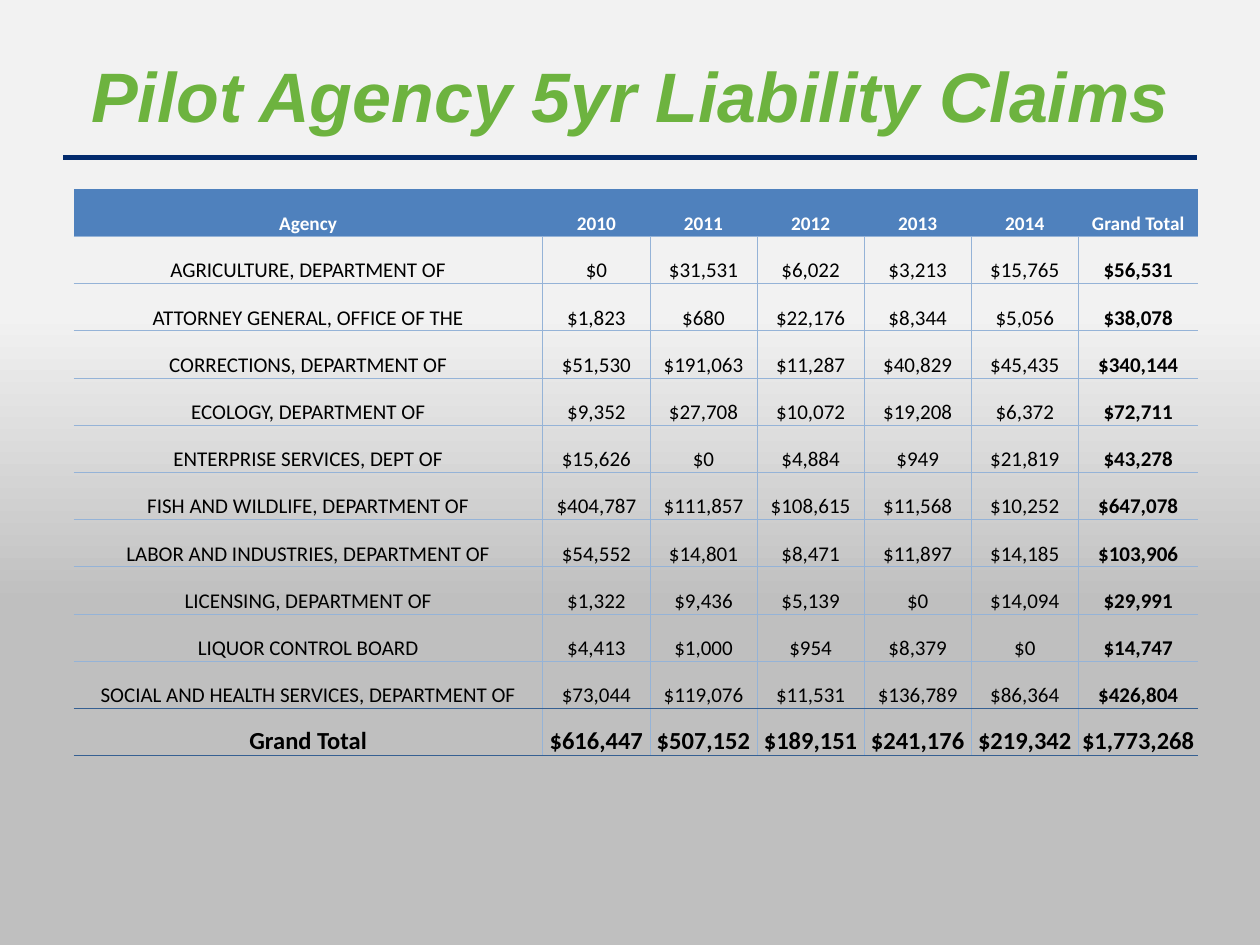
from dataclasses import dataclass

from lxml.etree import SubElement
from pptx import Presentation
from pptx.dml.color import RGBColor
from pptx.enum.shapes import MSO_CONNECTOR
from pptx.enum.text import MSO_ANCHOR, MSO_AUTO_SIZE, PP_ALIGN
from pptx.oxml.ns import qn
from pptx.util import Pt

NAVY, GREEN, BLUE = "032B6D", "6DB33F", "4F81BD"
PALE_BLUE, DARK_BLUE = "95B3D7", "366092"
WHITE, BLACK = "FFFFFF", "000000"
NO_STYLE = "{2D5ABB26-0587-4C30-8999-92F81FD0307C}"

COLUMN_WIDTHS = [268.2, *[61.2] * 5, 68.4]
ROW_HEIGHT = 27
HEADER = ["Agency", "2010", "2011", "2012", "2013", "2014", "Grand Total"]
CLAIMS = [
    ["AGRICULTURE, DEPARTMENT OF", 0, 31531, 6022, 3213, 15765, 56531],
    ["ATTORNEY GENERAL, OFFICE OF THE", 1823, 680, 22176, 8344, 5056, 38078],
    ["CORRECTIONS, DEPARTMENT OF", 51530, 191063, 11287, 40829, 45435, 340144],
    ["ECOLOGY, DEPARTMENT OF", 9352, 27708, 10072, 19208, 6372, 72711],
    ["ENTERPRISE SERVICES, DEPT OF", 15626, 0, 4884, 949, 21819, 43278],
    ["FISH AND WILDLIFE, DEPARTMENT OF", 404787, 111857, 108615, 11568, 10252, 647078],
    ["LABOR AND INDUSTRIES, DEPARTMENT OF", 54552, 14801, 8471, 11897, 14185, 103906],
    ["LICENSING, DEPARTMENT OF", 1322, 9436, 5139, 0, 14094, 29991],
    ["LIQUOR CONTROL BOARD", 4413, 1000, 954, 8379, 0, 14747],
    ["SOCIAL AND HEALTH SERVICES, DEPARTMENT OF", 73044, 119076, 11531, 136789, 86364, 426804],
]
TOTALS = ["Grand Total", 616447, 507152, 189151, 241176, 219342, 1773268]


@dataclass
class Border:
    color: str = PALE_BLUE
    width: float = 0.5


@dataclass
class RowStyle:
    size: float
    color: str = BLACK
    bold: bool = False
    fill: str | None = None
    top: Border | None = None
    bottom: Border | None = None
    inner: Border | None = None


THIN, DARK, HEAVY = Border(), Border(DARK_BLUE), Border(DARK_BLUE, 1)
HEADER_STYLE = RowStyle(11, WHITE, bold=True, fill=BLUE, bottom=THIN)
AGENCY_STYLE = RowStyle(12, top=THIN, bottom=THIN, inner=THIN)
LAST_AGENCY_STYLE = RowStyle(12, top=THIN, bottom=DARK, inner=THIN)
TOTAL_STYLE = RowStyle(14, bold=True, top=DARK, bottom=HEAVY, inner=THIN)


def rgb(color: str) -> RGBColor:
    return RGBColor.from_string(color)


def set_border(cell, side: str, border: Border | None) -> None:
    """Add one edge; edges must be added before the cell's fill."""
    line = SubElement(cell._tc.get_or_add_tcPr(), qn(f"a:ln{side}"))
    if border is None:
        SubElement(line, qn("a:noFill"))
        return
    line.set("w", str(Pt(border.width)))
    fill = SubElement(line, qn("a:solidFill"))
    SubElement(fill, qn("a:srgbClr"), val=border.color)


def format_font(font, name: str, size: float, color: str, bold: bool) -> None:
    font.name, font.size, font.bold = name, Pt(size), bold
    font.color.rgb = rgb(color)


def fill_cell(cell, value: str | int, style: RowStyle, column: int) -> None:
    last = len(HEADER) - 1
    cell.margin_left = cell.margin_right = cell.margin_top = Pt(0.72)
    cell.margin_bottom = 0
    cell.vertical_anchor = MSO_ANCHOR.BOTTOM
    set_border(cell, "L", style.inner if column > 0 else None)
    set_border(cell, "R", style.inner if column < last else None)
    set_border(cell, "T", style.top)
    set_border(cell, "B", style.bottom)
    if style.fill:
        cell.fill.solid()
        cell.fill.fore_color.rgb = rgb(style.fill)
    else:
        cell.fill.background()
    cell.text_frame.text = value if isinstance(value, str) else f"${value:,}"
    paragraph = cell.text_frame.paragraphs[0]
    paragraph.alignment = PP_ALIGN.CENTER
    format_font(paragraph.runs[0].font, "Calibri", style.size, style.color,
                style.bold or column == last)


def add_background(slide) -> None:
    fill = slide.background.fill
    fill.gradient()
    fill.gradient_angle = 270
    for stop, position, color in zip(fill.gradient_stops, (0.33, 0.64), ("F2F2F2", "BFBFBF")):
        stop.position = position
        stop.color.rgb = rgb(color)


def add_title(slide) -> None:
    title = slide.shapes.title
    title.left, title.top, title.width, title.height = Pt(36), Pt(24), Pt(648), Pt(60)
    text_frame = title.text_frame
    text_frame.text = "Pilot Agency 5yr Liability Claims"
    text_frame.auto_size = MSO_AUTO_SIZE.NONE
    text_frame.vertical_anchor = MSO_ANCHOR.MIDDLE
    paragraph = text_frame.paragraphs[0]
    paragraph.alignment = PP_ALIGN.CENTER
    font = paragraph.runs[0].font
    format_font(font, "Arial", 40, GREEN, bold=True)
    font.italic = True


def add_title_rule(slide) -> None:
    rule = slide.shapes.add_connector(MSO_CONNECTOR.STRAIGHT, Pt(36), Pt(90), Pt(684), Pt(90))
    rule.line.color.rgb = rgb(NAVY)
    rule.line.width = Pt(3)
    SubElement(rule._element.spPr, qn("a:effectLst"))


def add_claims_table(slide) -> None:
    rows = [(HEADER, HEADER_STYLE)]
    rows += [(claim, AGENCY_STYLE) for claim in CLAIMS[:-1]]
    rows += [(CLAIMS[-1], LAST_AGENCY_STYLE), (TOTALS, TOTAL_STYLE)]
    frame = slide.shapes.add_table(len(rows), len(HEADER), Pt(42), Pt(108),
                                   Pt(sum(COLUMN_WIDTHS)), Pt(ROW_HEIGHT * len(rows)))
    table = frame.table
    table.horz_banding = False
    table._tbl.tblPr.find(qn("a:tableStyleId")).text = NO_STYLE
    for column, width in zip(table.columns, COLUMN_WIDTHS):
        column.width = Pt(width)
    for row, (values, style) in zip(table.rows, rows):
        row.height = Pt(ROW_HEIGHT)
        for column, (cell, value) in enumerate(zip(row.cells, values)):
            fill_cell(cell, value, style, column)


def main() -> None:
    presentation = Presentation()
    presentation.slide_width, presentation.slide_height = Pt(720), Pt(540)
    slide = presentation.slides.add_slide(presentation.slide_layouts[5])
    add_background(slide)
    add_title_rule(slide)
    add_title(slide)
    add_claims_table(slide)
    presentation.save("out.pptx")


if __name__ == "__main__":
    main()
